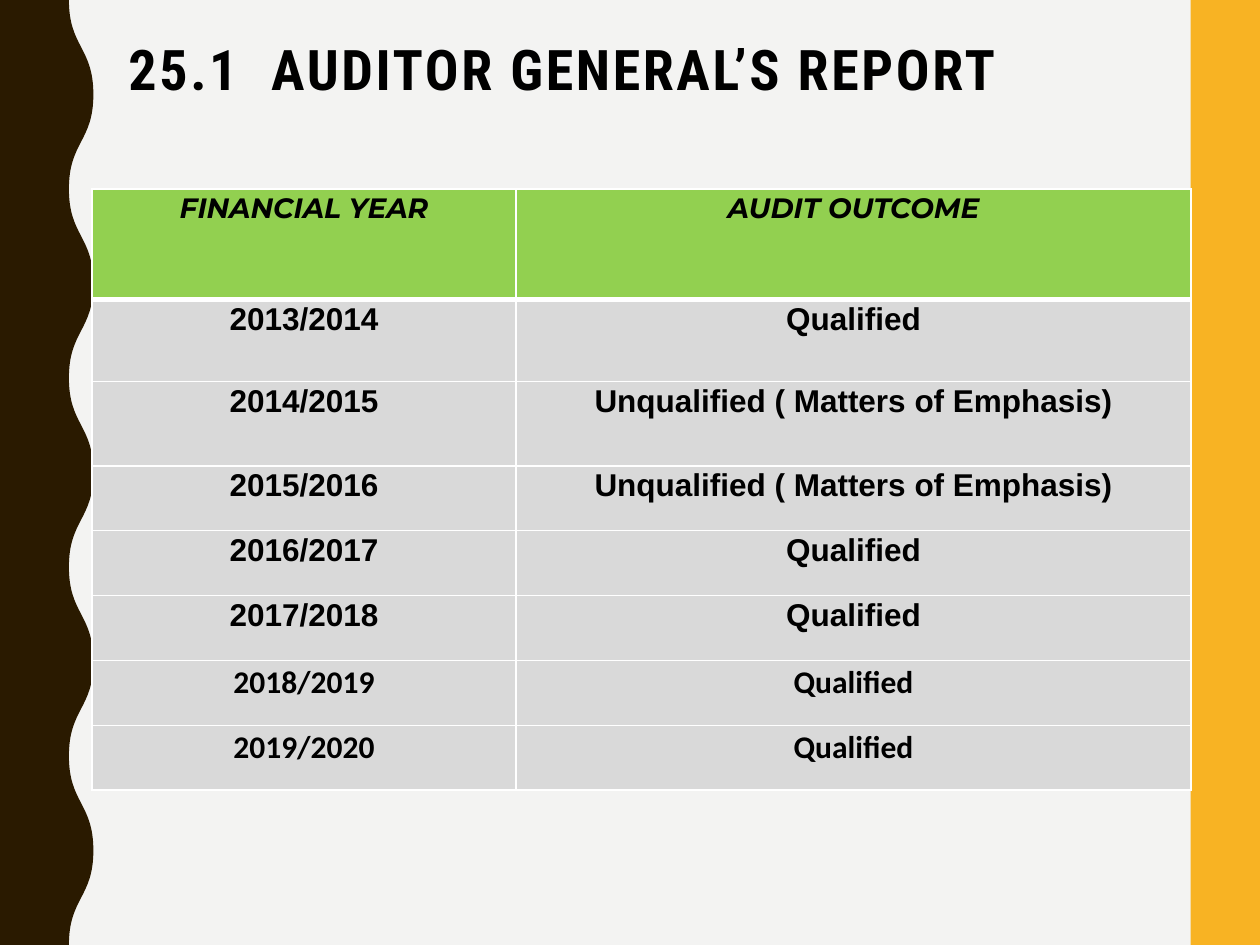
from lxml import etree
from pptx import Presentation
from pptx import util as u
from pptx.dml import color
from pptx.enum import shapes, text
from pptx.oxml import ns

TITLE = "25.1  AUDITOR GENERAL’S REPORT"
OUTCOMES = [
    ("FINANCIAL YEAR", "AUDIT OUTCOME"),
    ("2013/2014", "Qualified"),
    ("2014/2015", "Unqualified ( Matters of Emphasis)"),
    ("2015/2016", "Unqualified ( Matters of Emphasis)"),
    ("2016/2017", "Qualified"),
    ("2017/2018", "Qualified"),
    ("2018/2019", "Qualified"),
    ("2019/2020", "Qualified"),
]
COLUMN_WIDTHS = [242.3, 385.7]
ROW_HEIGHTS = [63.2, 46.8, 48.2] + [37.1] * 5
HEADER_FONT = {"name": "Montserrat", "size": u.Pt(16), "bold": True, "italic": True}
BODY_FONT = {"name": "Arial", "size": u.Pt(18), "bold": True}
RECENT_FONT = BODY_FONT | {"name": "Calibri"}
ROW_FONTS = [HEADER_FONT] + [BODY_FONT] * 5 + [RECENT_FONT] * 2
TITLE_FONT = {"name": "Roboto Condensed", "size": u.Pt(32), "bold": True}
TITLE_PARAGRAPH = {"alignment": text.PP_ALIGN.LEFT, "line_spacing": 0.9, "space_after": u.Pt(10)}
CELL_PARAGRAPH = {"alignment": text.PP_ALIGN.CENTER, "line_spacing": 1.07, "space_after": u.Pt(8)}
CELL_FORMAT = {"margin_left": u.Pt(5), "margin_right": u.Pt(5), "margin_top": 0, "margin_bottom": 0}
RIGHT_BANDS = [(703.4, 16.6), (680.4, 39.6)]
SLIDE_WIDTH, SLIDE_HEIGHT = 720, 540
WAVE_INNER, WAVE_OUTER, WAVE_STEP = 39.4, 53.4, 54


def apply(target, values):
    for name, value in values.items():
        setattr(target, name, value)


def paint(fill, value):
    fill.solid()
    fill.fore_color.rgb = color.RGBColor.from_string(value)


def write(frame, content, paragraph_format, font_format):
    paragraph = frame.paragraphs[0]
    apply(paragraph, paragraph_format)
    run = paragraph.add_run()
    run.text = content
    apply(run.font, font_format)
    paint(run.font.fill, "000000")
    return run


def finish(shape, value):
    paint(shape.fill, value)
    shape.line.fill.background()
    shape.shadow.inherit = False


def add_wave(slide):
    count = SLIDE_HEIGHT // WAVE_STEP
    points = [
        (u.Pt(WAVE_OUTER if index % 2 else WAVE_INNER), u.Pt(index * WAVE_STEP))
        for index in range(count + 1)
    ]
    builder = slide.shapes.build_freeform(*points[0])
    builder.add_line_segments([*points[1:], (0, u.Pt(SLIDE_HEIGHT)), (0, 0)], close=True)
    wave = builder.convert_to_shape()
    finish(wave, "2A1A00")
    segments = list(wave._element.iter(ns.qn("a:lnTo")))[:count]
    for segment, (start_x, start_y), (end_x, end_y) in zip(segments, points, points[1:]):
        middle = (start_y + end_y) // 2
        curve = etree.Element(ns.qn("a:cubicBezTo"))
        for x, y in [(start_x, middle), (end_x, middle), (end_x, end_y)]:
            etree.SubElement(curve, ns.qn("a:pt"), x=str(x), y=str(y))
        segment.getparent().replace(segment, curve)


def add_border(cell, side, width):
    properties = cell._tc.get_or_add_tcPr()
    line = etree.SubElement(properties, ns.qn(f"a:ln{side}"), w=str(u.Pt(width)))
    fill = etree.SubElement(line, ns.qn("a:solidFill"))
    etree.SubElement(fill, ns.qn("a:srgbClr"), val="FFFFFF")


def add_bands(slide):
    for left, width in RIGHT_BANDS:
        band = slide.shapes.add_shape(
            shapes.MSO_SHAPE.RECTANGLE, u.Pt(left), 0, u.Pt(width), u.Pt(SLIDE_HEIGHT)
        )
        finish(band, "F8B323")


def add_title(slide):
    title = slide.shapes.title
    apply(title, {"left": u.Pt(66.2), "top": u.Pt(20.2), "width": u.Pt(615), "height": u.Pt(54)})
    frame = title.text_frame
    apply(frame, {
        "word_wrap": True,
        "auto_size": text.MSO_AUTO_SIZE.NONE,
        "vertical_anchor": text.MSO_ANCHOR.TOP,
    })
    run = write(frame, TITLE, TITLE_PARAGRAPH, TITLE_FONT)
    run._r.get_or_add_rPr().set("spc", "150")
    properties = frame.paragraphs[0]._p.get_or_add_pPr()
    properties.set("marL", str(u.Pt(18)))
    properties.set("indent", str(u.Pt(-18)))


def add_outcome_table(slide):
    table = slide.shapes.add_table(
        len(OUTCOMES), len(COLUMN_WIDTHS), u.Pt(52.6), u.Pt(108),
        u.Pt(sum(COLUMN_WIDTHS)), u.Pt(sum(ROW_HEIGHTS)),
    ).table
    table.horz_banding = False
    for column, width in zip(table.columns, COLUMN_WIDTHS):
        column.width = u.Pt(width)
    for index, (row, height) in enumerate(zip(table.rows, ROW_HEIGHTS)):
        row.height = u.Pt(height)
        widths = {"L": 1, "R": 1, "T": 3 if index == 1 else 1, "B": 3 if index == 0 else 1}
        for cell, content in zip(row.cells, OUTCOMES[index]):
            apply(cell, CELL_FORMAT)
            for side, width in widths.items():
                add_border(cell, side, width)
            paint(cell.fill, "92D050" if index == 0 else "D9D9D9")
            write(cell.text_frame, content, CELL_PARAGRAPH, ROW_FONTS[index])


def main():
    presentation = Presentation()
    presentation.slide_width = u.Pt(SLIDE_WIDTH)
    presentation.slide_height = u.Pt(SLIDE_HEIGHT)
    slide = presentation.slides.add_slide(presentation.slide_layouts.get_by_name("Title Only"))
    paint(slide.background.fill, "F3F3F2")
    add_bands(slide)
    add_wave(slide)
    add_title(slide)
    add_outcome_table(slide)
    presentation.save("out.pptx")


if __name__ == "__main__":
    main()
